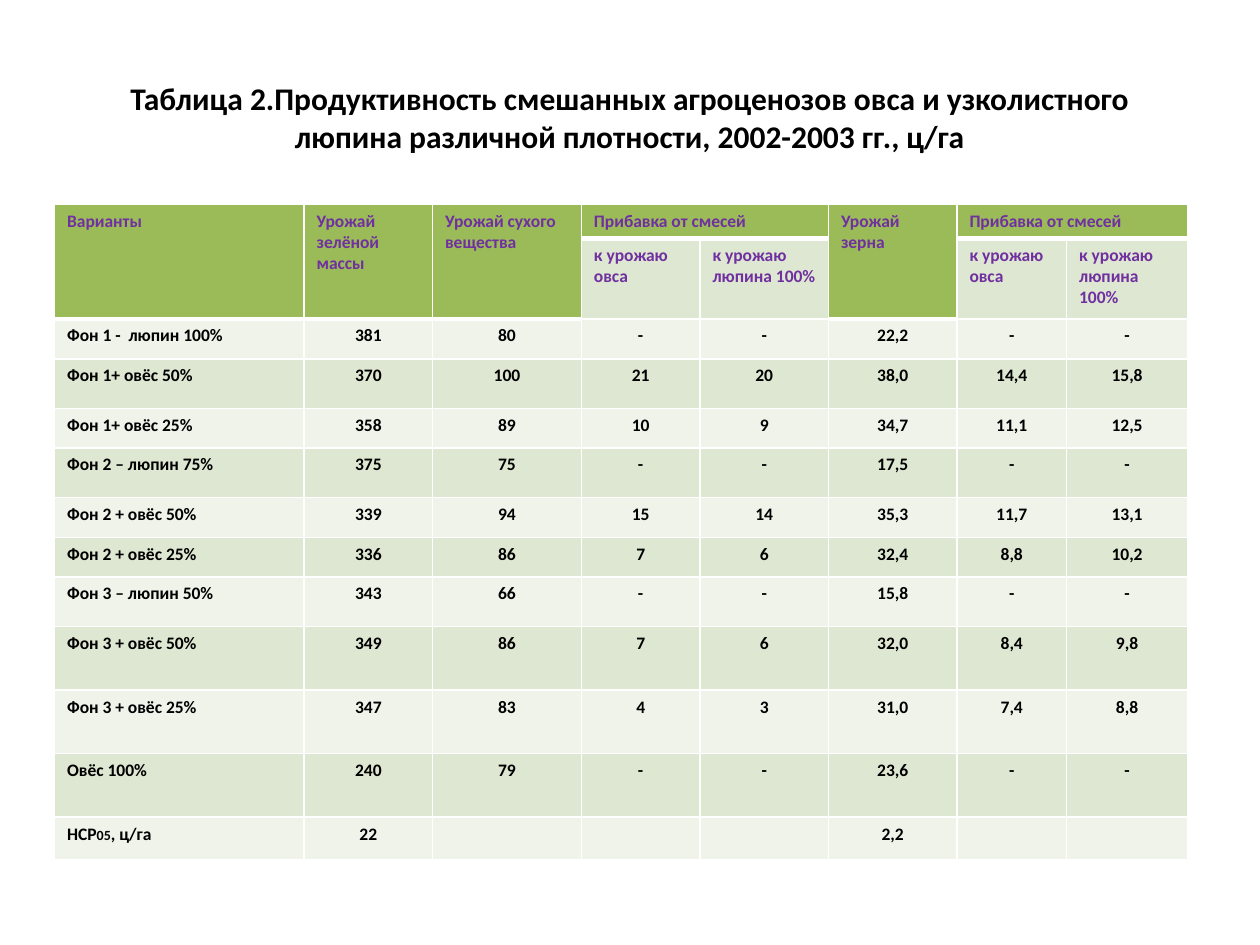
from dataclasses import dataclass

from lxml.etree import SubElement
from pptx import Presentation
from pptx.dml.color import RGBColor
from pptx.enum.text import MSO_ANCHOR as Anchor, PP_ALIGN as Align
from pptx.oxml.ns import qn
from pptx.util import Cm, Pt

BLACK = RGBColor(0x00, 0x00, 0x00)
WHITE = RGBColor(0xFF, 0xFF, 0xFF)
PURPLE = RGBColor(0x70, 0x30, 0xA0)
GREEN = RGBColor(0x9B, 0xBB, 0x59)
BAND_DARK = RGBColor(0xDE, 0xE7, 0xD1)
BAND_LIGHT = RGBColor(0xEF, 0xF3, 0xEA)

FONT = "Calibri"
THIN, THICK = Pt(1), Pt(3)


@dataclass(frozen=True)
class Heading:
    text: str
    row: int
    col: int
    rows: int = 1
    cols: int = 1


@dataclass(frozen=True)
class Variant:
    name: str | list[tuple[str, float]]  # plain name, or parts with their sizes
    values: list[str]
    height: float


HEADINGS = [
    Heading("Варианты", 0, 0, rows=2),
    Heading("Урожай зелёной массы", 0, 1, rows=2),
    Heading("Урожай сухого вещества", 0, 2, rows=2),
    Heading("Прибавка от смесей", 0, 3, cols=2),
    Heading("Урожай зерна", 0, 5, rows=2),
    Heading("Прибавка от смесей", 0, 6, cols=2),
    Heading("к урожаю овса", 1, 3),
    Heading("к урожаю люпина 100%", 1, 4),
    Heading("к урожаю овса", 1, 6),
    Heading("к урожаю люпина 100%", 1, 7),
]
VARIANTS = [
    Variant("Фон 1 -  люпин 100%", ["381", "80", "-", "-", "22,2", "-", "-"], 0.8),
    Variant("Фон 1+ овёс 50%", ["370", "100", "21", "20", "38,0", "14,4", "15,8"], 1),
    Variant("Фон 1+ овёс 25%", ["358", "89", "10", "9", "34,7", "11,1", "12,5"], 0.8),
    Variant("Фон 2 – люпин 75%", ["375", "75", "-", "-", "17,5", "-", "-"], 1),
    Variant("Фон 2 + овёс 50%", ["339", "94", "15", "14", "35,3", "11,7", "13,1"], 0.8),
    Variant("Фон 2 + овёс 25%", ["336", "86", "7", "6", "32,4", "8,8", "10,2"], 0.8),
    Variant("Фон 3 – люпин 50%", ["343", "66", "-", "-", "15,8", "-", "-"], 1),
    Variant("Фон 3 + овёс 50%", ["349", "86", "7", "6", "32,0", "8,4", "9,8"], 1.28),
    Variant("Фон 3 + овёс 25%", ["347", "83", "4", "3", "31,0", "7,4", "8,8"], 1.28),
    Variant("Овёс 100%", ["240", "79", "-", "-", "23,6", "-", "-"], 1.28),
    Variant([("НСР", 10), ("05", 8), (", ц/га", 10)],
            ["22", "", "", "", "2,2", "", ""], 0.86),
]
HEADER_HEIGHTS = [0.68, 1.63]
COLUMN_WIDTHS = [5.03, 2.59, 3, 2.39, 2.59, 2.59, 2.21, 2.44]
GREEN_CELLS = {(h.row + r, h.col + c) for h in HEADINGS if h.row == 0
               for r in range(h.rows) for c in range(h.cols)}


def write(frame, text, *, size: float = 10, color: RGBColor = BLACK,
          align: Align = Align.LEFT) -> None:
    """Fill a text frame with one bold paragraph; text may be (part, size) pairs."""
    paragraph = frame.paragraphs[0]
    paragraph.alignment = align
    parts = [(text, size)] if isinstance(text, str) else text
    for part, part_size in parts:
        if part:
            run = paragraph.add_run()
            run.text = part
            run.font.name = FONT
            run.font.size = Pt(part_size)
            run.font.bold = True
            run.font.color.rgb = color
        else:  # an empty cell must not stretch its row
            SubElement(paragraph._p, qn("a:endParaRPr"), sz=str(int(size * 100)))


def draw_borders(cell, top: int, bottom: int) -> None:
    properties = cell._tc.get_or_add_tcPr()
    for side, width in (("L", THIN), ("R", THIN), ("T", top), ("B", bottom)):
        line = SubElement(properties, qn(f"a:ln{side}"), w=str(width))
        fill = SubElement(line, qn("a:solidFill"))
        SubElement(fill, qn("a:srgbClr"), val=str(WHITE))


def bottom_width(row: int, col: int) -> int:
    return THICK if (row, col) in GREEN_CELLS else THIN


def style_cell(cell, row: int, col: int) -> None:
    draw_borders(cell, bottom_width(row - 1, col), bottom_width(row, col))
    cell.fill.solid()
    band = BAND_DARK if row % 2 else BAND_LIGHT
    cell.fill.fore_color.rgb = GREEN if (row, col) in GREEN_CELLS else band


def draw_table(slide) -> None:
    heights = HEADER_HEIGHTS + [variant.height for variant in VARIANTS]
    yields = slide.shapes.add_table(
        len(heights), len(COLUMN_WIDTHS), Cm(1.1), Cm(4.12),
        Cm(sum(COLUMN_WIDTHS)), Cm(sum(heights))).table
    yields.first_row = yields.horz_banding = False
    for column, width in zip(yields.columns, COLUMN_WIDTHS):
        column.width = Cm(width)
    for row, height in enumerate(heights):
        yields.rows[row].height = Cm(height)
        for col in range(len(COLUMN_WIDTHS)):
            style_cell(yields.cell(row, col), row, col)

    # Two-level header
    for heading in HEADINGS:
        cell = yields.cell(heading.row, heading.col)
        if heading.rows * heading.cols > 1:
            cell.merge(yields.cell(heading.row + heading.rows - 1,
                                   heading.col + heading.cols - 1))
        write(cell.text_frame, heading.text, color=PURPLE)
    for row, col in GREEN_CELLS:
        if yields.cell(row, col).is_spanned:
            write(yields.cell(row, col).text_frame, "")

    # Yields of each variant
    for row, variant in enumerate(VARIANTS, start=len(HEADER_HEIGHTS)):
        write(yields.cell(row, 0).text_frame, variant.name)
        for col, value in enumerate(variant.values, start=1):
            write(yields.cell(row, col).text_frame, value, align=Align.CENTER)


def main() -> None:
    deck = Presentation()
    deck.slide_width, deck.slide_height = Cm(25.4), Cm(19.05)
    slide = deck.slides.add_slide(deck.slide_layouts[5])

    # Title
    title = slide.shapes.title
    title.left, title.top = Cm(1.27), Cm(0.76)
    title.width, title.height = Cm(22.86), Cm(3.18)
    title.text_frame.vertical_anchor = Anchor.MIDDLE
    write(title.text_frame,
          "Таблица 2.Продуктивность смешанных агроценозов овса и узколистного "
          "люпина различной плотности, 2002-2003 гг., ц/га",
          size=18, align=Align.CENTER)

    draw_table(slide)
    deck.save("out.pptx")


if __name__ == "__main__":
    main()
